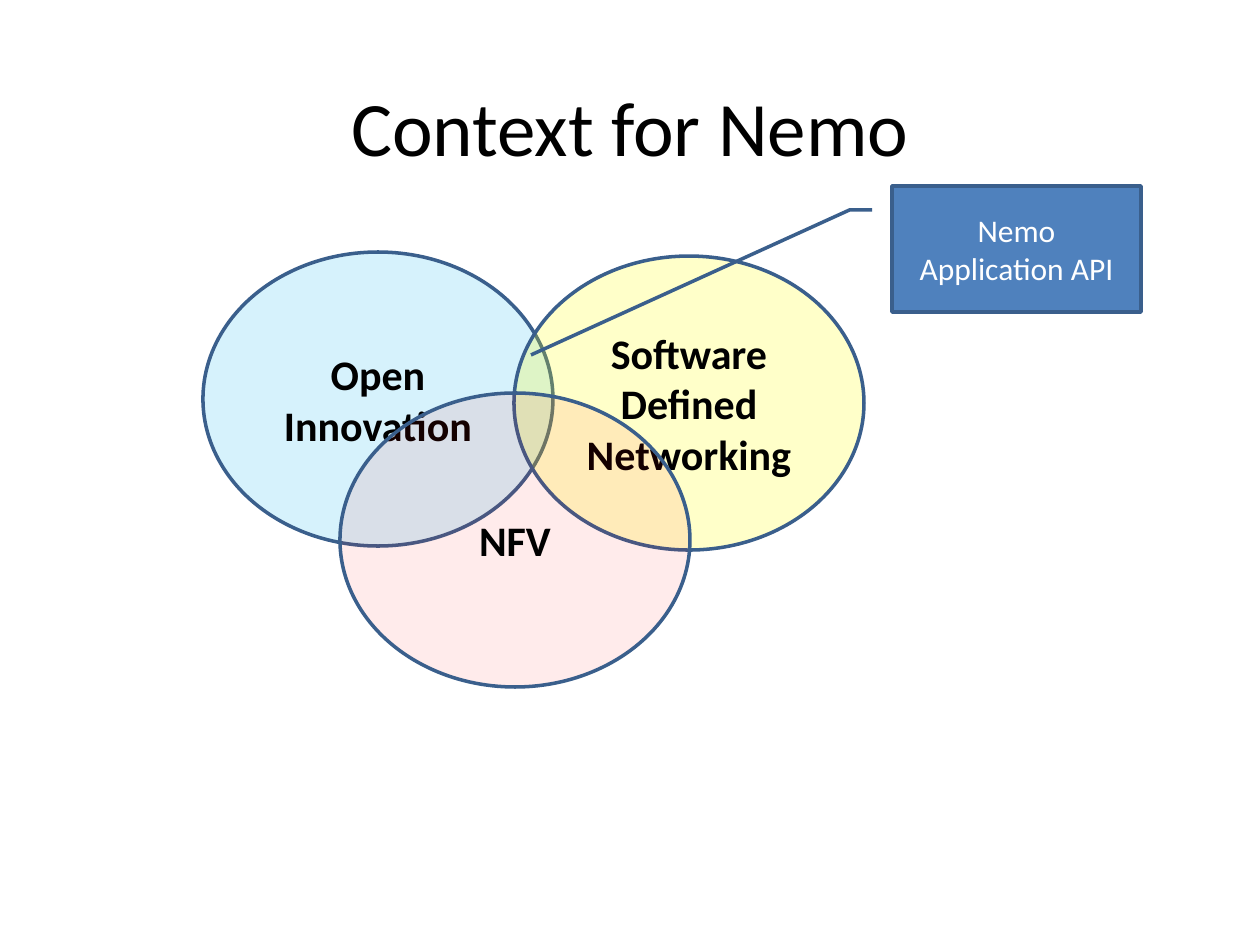
import pptx
import pptx.util
from lxml import etree
from pptx.dml.color import RGBColor
from pptx.enum.shapes import MSO_SHAPE
from pptx.enum.text import MSO_ANCHOR, PP_ALIGN
from pptx.oxml.ns import qn

PX = 914400 / 126
FONT = "Calibri"
OUTLINE = "3A5F8C"


def px(length):
    return pptx.util.Emu(round(length * PX))


def color(value):
    return RGBColor.from_string(value)


def write(shape, lines, size, ink, bold=False):
    """Fill a shape with centred lines, one paragraph each."""
    frame = shape.text_frame
    frame.word_wrap = True
    frame.vertical_anchor = MSO_ANCHOR.MIDDLE
    for index, line in enumerate(lines):
        para = frame.add_paragraph() if index else frame.paragraphs[0]
        para.alignment = PP_ALIGN.CENTER
        span = para.add_run()
        span.text = line
        span.font.name = FONT
        span.font.size = pptx.util.Pt(size)
        span.font.bold = bold
        span.font.color.rgb = color(ink)


def add_outlined(page, kind, box, fill, opacity=100):
    """Add a preset shape with the common outline and an optionally clear fill."""
    shape = page.shapes.add_shape(kind, *map(px, box))
    shape.shadow.inherit = False
    shape.fill.solid()
    shape.fill.fore_color.rgb = color(fill)
    if opacity < 100:
        tint = shape.fill._xPr.find(qn("a:solidFill"))[0]
        etree.SubElement(tint, qn("a:alpha")).set("val", str(opacity * 1000))
    shape.line.color.rgb = color(OUTLINE)
    shape.line.width = pptx.util.Pt(2)
    return shape


def add_title(page, box):
    title = page.shapes.title
    title.left, title.top, title.width, title.height = map(px, box)
    write(title, ["Context for Nemo"], 44, "000000")


def add_venn(page, left, top):
    """Three overlapping ellipses of one size, offset from the region's corner."""
    width, height = 350, 294
    circles = [
        (0, 0, "00B0F0", 16, ["Open Innovation"]),
        (311, 4, "FFFF00", 21, ["Software", "Defined", "Networking"]),
        (137, 141, "FF0000", 8, ["NFV"]),
    ]
    for across, down, fill, opacity, lines in circles:
        box = (left + across, top + down, width, height)
        circle = add_outlined(page, MSO_SHAPE.OVAL, box, fill, opacity)
        write(circle, lines, 24, "000000", bold=True)


def add_callout(page, box, target):
    """Callout whose bent leader ends at the target point."""
    left, top, width, height = box
    callout = add_outlined(page, MSO_SHAPE.LINE_CALLOUT_2, box, "4F81BD")
    tip = ((target[1] - top) / height, (target[0] - left) / width)
    # Pairs of (down, across) as shares of the box: start, bend, tip
    for index, share in enumerate((0.19, -0.08, 0.19, -0.17, *tip)):
        callout.adjustments[index] = share
    write(callout, ["Nemo", "Application API"], 18, "FFFFFF")


def main():
    deck = pptx.Presentation()
    deck.slide_width, deck.slide_height = px(1260), px(945)
    page = deck.slides.add_slide(deck.slide_layouts[5])
    add_title(page, (63, 47, 1134, 158))
    add_venn(page, 203, 252)
    add_callout(page, (892, 186, 249, 126), target=(531, 355))
    deck.save("out.pptx")


if __name__ == "__main__":
    main()
